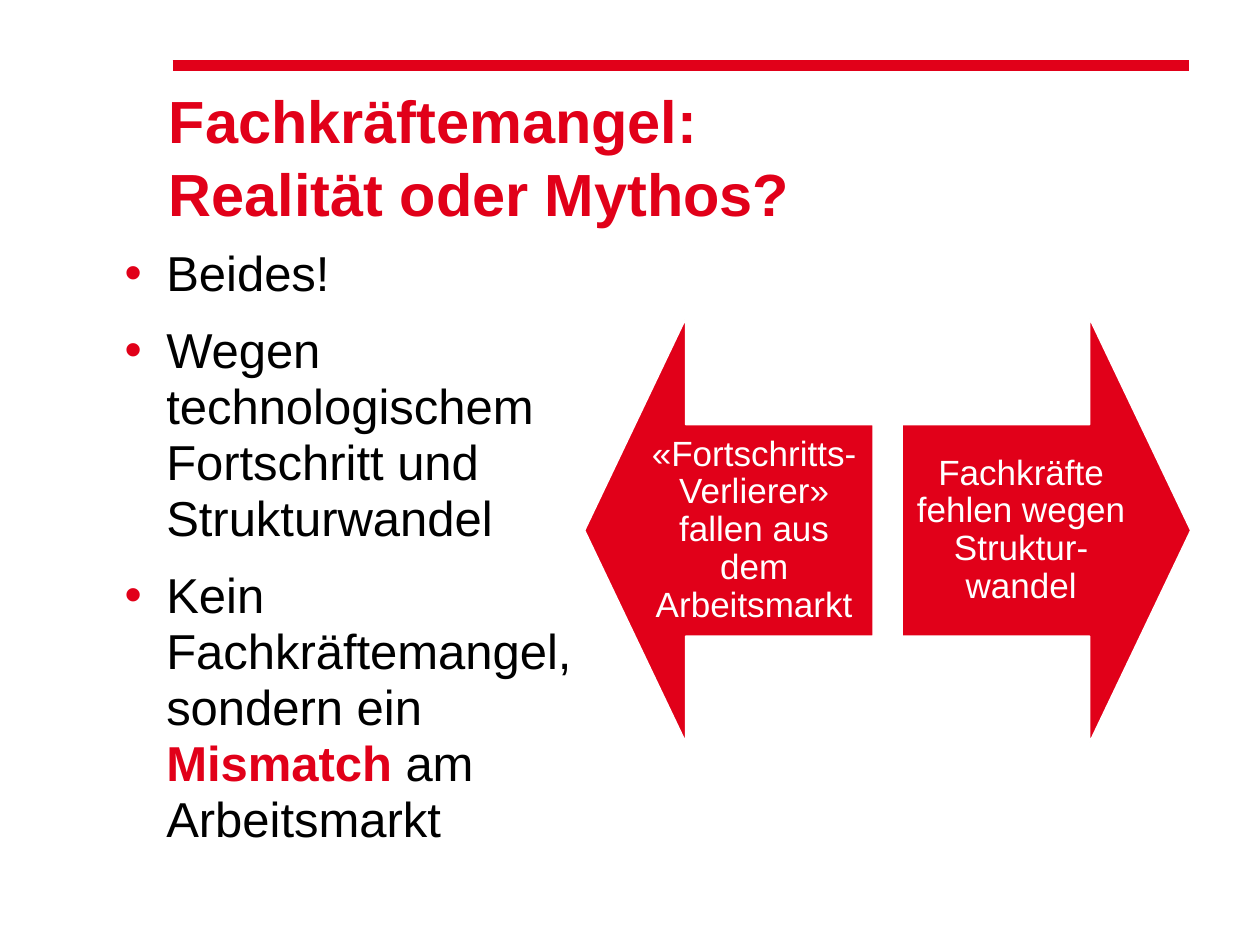
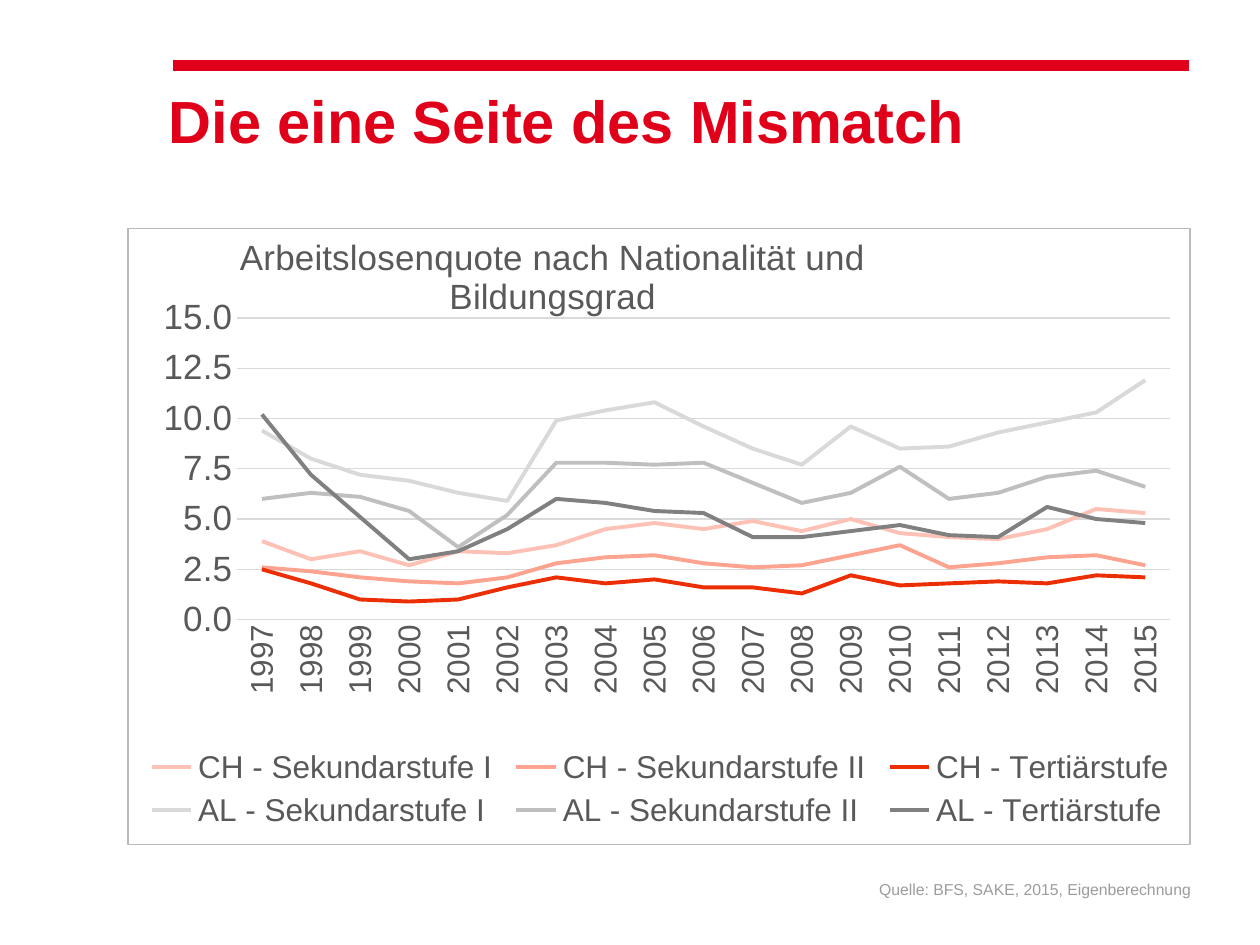
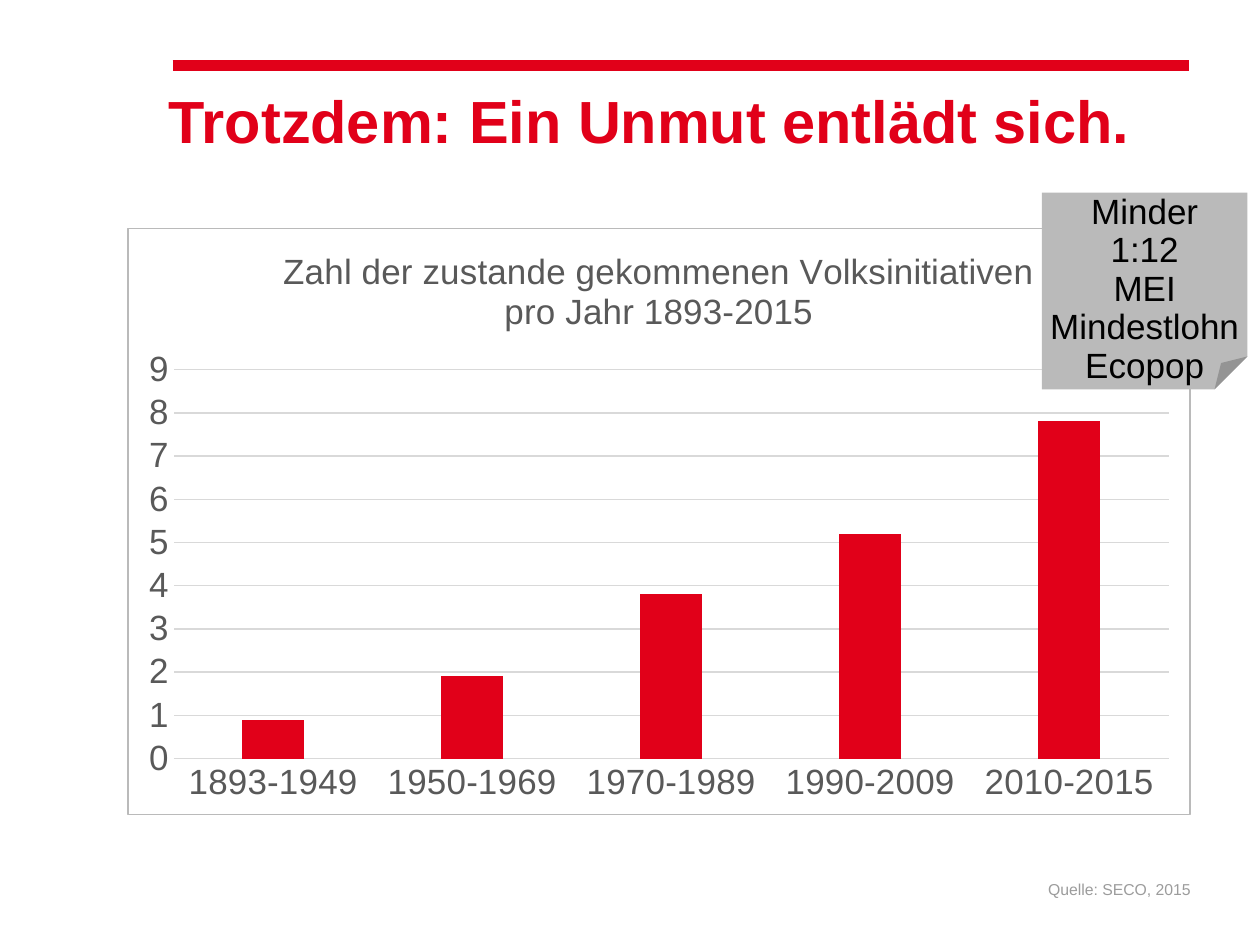
from pptx import Presentation
from pptx.chart.data import CategoryChartData
from pptx.dml.color import RGBColor
from pptx.enum.chart import XL_CHART_TYPE, XL_LEGEND_POSITION, XL_TICK_MARK
from pptx.enum.shapes import MSO_CONNECTOR, MSO_SHAPE
from pptx.enum.text import MSO_ANCHOR, PP_ALIGN
from pptx.oxml import parse_xml
from pptx.oxml.ns import nsdecls, qn
from pptx.util import Inches, Pt

FONT = "Arial"
RED = RGBColor(0xE1, 0x00, 0x19)
BLACK = RGBColor(0x00, 0x00, 0x00)
WHITE = RGBColor(0xFF, 0xFF, 0xFF)
SOURCE_GRAY = RGBColor(0x9C, 0x9C, 0x9C)
CHART_TEXT = RGBColor(0x59, 0x59, 0x59)
GRID_GRAY = RGBColor(0xD9, 0xD9, 0xD9)
NOTE_GRAY = RGBColor(0xBA, 0xBA, 0xBA)
CHART_WIDTH = 8.44

MISMATCH_TITLE = "Fachkräftemangel:\nRealität oder Mythos?"
BULLETS = [
    ["Beides!"],
    ["Wegen technologischem Fortschritt und Strukturwandel"],
    ["Kein Fachkräftemangel, sondern ein ", ("Mismatch ", RED), "am Arbeitsmarkt"],
]
ARROWS = [
    (MSO_SHAPE.LEFT_ARROW, 4.64, "«Fortschritts-Verlierer» fallen aus dem Arbeitsmarkt"),
    (MSO_SHAPE.RIGHT_ARROW, 7.16, "Fachkräfte fehlen wegen Struktur-wandel"),
]

UNEMPLOYMENT = {
    "kind": XL_CHART_TYPE.LINE,
    "title": ["Arbeitslosenquote nach Nationalität und Bildungsgrad"],
    "height": 4.9,
    "categories": [str(year) for year in range(1997, 2016)],
    "series": [
        ("CH - Sekundarstufe I", RGBColor(0xFD, 0xC2, 0xB5),
         [3.9, 3, 3.4, 2.7, 3.4, 3.3, 3.7, 4.5, 4.8, 4.5, 4.9, 4.4, 5, 4.3, 4.1, 4, 4.5, 5.5, 5.3]),
        ("CH - Sekundarstufe II", RGBColor(0xFD, 0xA4, 0x91),
         [2.6, 2.4, 2.1, 1.9, 1.8, 2.1, 2.8, 3.1, 3.2, 2.8, 2.6, 2.7, 3.2, 3.7, 2.6, 2.8, 3.1, 3.2, 2.7]),
        ("CH - Tertiärstufe", RGBColor(0xEC, 0x2E, 0x05),
         [2.5, 1.8, 1, 0.9, 1, 1.6, 2.1, 1.8, 2, 1.6, 1.6, 1.3, 2.2, 1.7, 1.8, 1.9, 1.8, 2.2, 2.1]),
        ("AL - Sekundarstufe I", RGBColor(0xD9, 0xD9, 0xD9),
         [9.4, 8, 7.2, 6.9, 6.3, 5.9, 9.9, 10.4, 10.8, 9.6, 8.5, 7.7, 9.6, 8.5, 8.6, 9.3, 9.8, 10.3, 11.9]),
        ("AL - Sekundarstufe II", RGBColor(0xBF, 0xBF, 0xBF),
         [6, 6.3, 6.1, 5.4, 3.6, 5.2, 7.8, 7.8, 7.7, 7.8, 6.8, 5.8, 6.3, 7.6, 6, 6.3, 7.1, 7.4, 6.6]),
        ("AL - Tertiärstufe", RGBColor(0x80, 0x80, 0x80),
         [10.2, 7.2, 5.1, 3, 3.4, 4.5, 6, 5.8, 5.4, 5.3, 4.1, 4.1, 4.4, 4.7, 4.2, 4.1, 5.6, 5, 4.8]),
    ],
    "category_size": 18, "maximum": 15, "step": 2.5, "number_format": "0.0",
}
INITIATIVES = {
    "kind": XL_CHART_TYPE.COLUMN_CLUSTERED,
    "title": ["Zahl der zustande gekommenen Volksinitiativen", "pro Jahr 1893-2015"],
    "height": 4.66,
    "categories": ["1893-1949", "1950-1969", "1970-1989", "1990-2009", "2010-2015"],
    "series": [("Series 1", RED, [0.9, 1.9, 3.8, 5.2, 7.8])],
    "category_size": 20, "maximum": 9, "step": 1, "number_format": "0",
}
NOTE_LINES = ["Minder", "1:12", "MEI", "Mindestlohn", "Ecopop"]


def write_text(frame, paragraphs, size=20, color=BLACK, bold=False, align=None,
               line_spacing=None, space_before=0, bullet=False):
    for index, content in enumerate(paragraphs):
        paragraph = frame.paragraphs[0] if index == 0 else frame.add_paragraph()
        if align is not None:
            paragraph.alignment = align
        if line_spacing:
            paragraph.line_spacing = line_spacing
        if space_before and index:
            paragraph.space_before = Pt(space_before)
        if bullet:
            add_bullet(paragraph)
        for piece in [content] if isinstance(content, str) else content:
            text, accent = (piece, None) if isinstance(piece, str) else piece
            for line_number, line in enumerate(text.split("\n")):
                if line_number:
                    paragraph.add_line_break()
                run = paragraph.add_run()
                run.text = line
                set_font(run.font, size, accent or color, bold or accent is not None)


def set_font(font, size, color, bold=False):
    font.name = FONT
    font.size = Pt(size)
    font.bold = bold
    font.color.rgb = color


def add_bullet(paragraph):
    properties = paragraph._p.get_or_add_pPr()
    properties.set("marL", str(Inches(0.33)))
    properties.set("indent", str(-Inches(0.33)))
    properties.append(parse_xml(f'<a:buClr {nsdecls("a")}><a:srgbClr val="{RED}"/></a:buClr>'))
    properties.append(parse_xml(f'<a:buFont {nsdecls("a")} typeface="{FONT}"/>'))
    properties.append(parse_xml(f'<a:buChar {nsdecls("a")} char="•"/>'))


def prepare_frame(shape, inset=0, anchor=MSO_ANCHOR.TOP):
    frame = shape.text_frame
    frame.word_wrap = True
    frame.vertical_anchor = anchor
    frame.margin_left = frame.margin_right = Inches(inset)
    frame.margin_top = frame.margin_bottom = Inches(inset)
    return frame


def add_text(slide, box, paragraphs, anchor=MSO_ANCHOR.TOP, **text_format):
    shape = slide.shapes.add_textbox(*map(Inches, box))
    write_text(prepare_frame(shape, anchor=anchor), paragraphs, **text_format)


def add_filled_shape(slide, kind, box, color):
    shape = slide.shapes.add_shape(kind, *map(Inches, box))
    shape.shadow.inherit = False
    shape.fill.solid()
    shape.fill.fore_color.rgb = color
    shape.line.fill.background()
    return shape


def add_slide(presentation, title, source=None):
    slide = presentation.slides.add_slide(presentation.slide_layouts[6])
    rule = slide.shapes.add_connector(
        MSO_CONNECTOR.STRAIGHT, Inches(1.37), Inches(0.52), Inches(9.44), Inches(0.52))
    rule.line.color.rgb = RED
    rule.line.width = Pt(6)
    rule._element.spPr.append(parse_xml(f'<a:effectLst {nsdecls("a")}/>'))
    add_text(slide, (1.34, 0.66, 8.11, 1.15), [title], size=34, color=RED, bold=True,
             line_spacing=Pt(41.5))
    if source:
        add_text(slide, (5, 6.7, 4.45, 0.43), [source], anchor=MSO_ANCHOR.BOTTOM,
                 size=9, color=SOURCE_GRAY, align=PP_ALIGN.RIGHT)
    return slide


def set_layout(parent, position, chart_height, inner=False, **lengths):
    for layout in parent.findall(qn("c:layout")):
        parent.remove(layout)
    target = '<c:layoutTarget val="inner"/>' if inner else ""
    modes = "".join(f'<c:{key}Mode val="edge"/>' for key in "xy")
    values = "".join(
        f'<c:{key} val="{length / (CHART_WIDTH if key in "xw" else chart_height)}"/>'
        for key, length in lengths.items())
    parent.insert(position, parse_xml(
        f'<c:layout {nsdecls("c")}><c:manualLayout>{target}{modes}{values}'
        '</c:manualLayout></c:layout>'))


def format_line(line, color, width=0.75):
    line.color.rgb = color
    line.width = Pt(width)


def add_chart(slide, content):
    data = CategoryChartData(number_format=content["number_format"])
    data.categories = content["categories"]
    for name, _, values in content["series"]:
        data.add_series(name, values)
    chart = slide.shapes.add_chart(
        content["kind"], Inches(1.01), Inches(1.81), Inches(CHART_WIDTH),
        Inches(content["height"]), data).chart
    set_font(chart.font, 20, BLACK)
    chart.has_legend = False
    chart.has_title = True
    write_text(chart.chart_title.text_frame, content["title"], color=CHART_TEXT)
    chart._chartSpace.chart.addnext(parse_xml(
        f'<c:spPr {nsdecls("c", "a")}><a:noFill/><a:ln w="{Pt(0.75)}"><a:solidFill>'
        f'<a:srgbClr val="{NOTE_GRAY}"/></a:solidFill></a:ln></c:spPr>'))

    for axis, size in ((chart.category_axis, content["category_size"]), (chart.value_axis, 20)):
        axis.major_tick_mark = axis.minor_tick_mark = XL_TICK_MARK.NONE
        set_font(axis.tick_labels.font, size, CHART_TEXT)
    format_line(chart.category_axis.format.line, GRID_GRAY)
    value_axis = chart.value_axis
    value_axis.minimum_scale = 0
    value_axis.maximum_scale = content["maximum"]
    value_axis.major_unit = content["step"]
    value_axis.tick_labels.number_format = content["number_format"]
    value_axis.tick_labels.number_format_is_linked = False
    value_axis.format.line.fill.background()
    format_line(value_axis.major_gridlines.format.line, GRID_GRAY)

    plot = chart.plots[0]
    plot.vary_by_categories = False
    for series, (_, color, _) in zip(plot.series, content["series"]):
        if content["kind"] == XL_CHART_TYPE.LINE:
            series.smooth = False
            format_line(series.format.line, color, 2.25)
        else:
            series.format.fill.solid()
            series.format.fill.fore_color.rgb = color
    return chart


def build_mismatch(presentation):
    slide = add_slide(presentation, MISMATCH_TITLE)
    for kind, left, text in ARROWS:
        arrow = add_filled_shape(slide, kind, (left, 2.53, 2.29, 3.36), RED)
        arrow.adjustments[0] = 0.5
        arrow.adjustments[1] = 0.35
        format_line(arrow.line, WHITE, 0.85)
        write_text(prepare_frame(arrow, 0.04, MSO_ANCHOR.MIDDLE), [text], color=WHITE,
                   align=PP_ALIGN.CENTER, line_spacing=0.9)
    add_text(slide, (0.99, 1.95, 3.9, 4.52), BULLETS, size=28, line_spacing=Pt(32),
             space_before=12, bullet=True)


def build_unemployment(presentation):
    slide = add_slide(presentation, "Die eine Seite des Mismatch",
                      "Quelle: BFS, SAKE, 2015, Eigenberechnung")
    chart = add_chart(slide, UNEMPLOYMENT)
    chart.has_legend = True
    legend = chart.legend
    legend.position = XL_LEGEND_POSITION.BOTTOM
    legend.include_in_layout = False
    set_font(legend.font, 18, CHART_TEXT)
    labels = chart.category_axis._element.find(qn("c:txPr"))
    labels.find(qn("a:bodyPr")).set("rot", "-5400000")
    height = UNEMPLOYMENT["height"]
    set_layout(chart._chartSpace.chart.plotArea, 0, height, inner=True,
               x=0.87, y=0.71, w=7.41, h=2.4)
    set_layout(chart.chart_title._element, 1, height, x=0.84, y=0)
    set_layout(legend._element, 1, height, x=0.08, y=4.08, w=8.3, h=0.75)


def build_initiatives(presentation):
    slide = add_slide(presentation, "Trotzdem: Ein Unmut entlädt sich.", "Quelle: SECO, 2015")
    plot = add_chart(slide, INITIATIVES).plots[0]
    plot.gap_width = 219
    plot.overlap = -27
    note = add_filled_shape(slide, MSO_SHAPE.FOLDED_CORNER, (8.27, 1.53, 1.63, 1.56), NOTE_GRAY)
    write_text(prepare_frame(note), NOTE_LINES, align=PP_ALIGN.CENTER, line_spacing=Pt(22))


def main():
    presentation = Presentation()
    presentation.slide_width = Inches(10)
    presentation.slide_height = Inches(7.5)
    build_mismatch(presentation)
    build_unemployment(presentation)
    build_initiatives(presentation)
    presentation.save("out.pptx")


if __name__ == "__main__":
    main()
